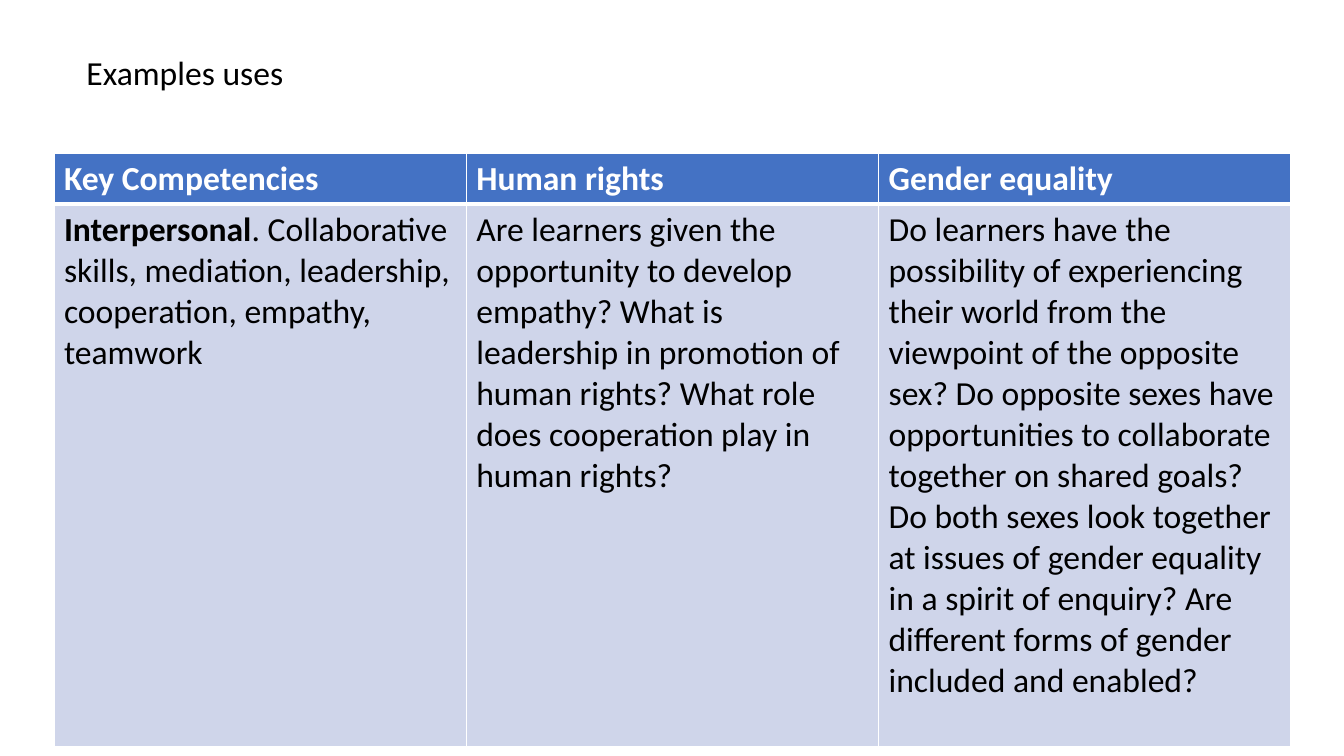
import dataclasses

import pptx
import pptx.dml.color
import pptx.enum.text
import pptx.oxml
import pptx.oxml.ns
import pptx.util

Cm = pptx.util.Cm
Pt = pptx.util.Pt


@dataclasses.dataclass(frozen=True)
class Theme:
    font: str = "Calibri"
    size: int = 24
    ink: str = "000000"
    paper: str = "FFFFFF"
    header: str = "4472C4"
    body: str = "CFD5EA"
    thin: int = 1
    thick: int = 3


@dataclasses.dataclass(frozen=True)
class Box:
    left: float
    top: float
    width: float
    height: float

    def lengths(self):
        return Cm(self.left), Cm(self.top), Cm(self.width), Cm(self.height)


THEME = Theme()
PAGE_WIDTH, PAGE_HEIGHT = 33.87, 19.05
HEADER_HEIGHT = 1.27

# Each column: heading, bold lead-in, body text
COLUMNS = [
    ("Key Competencies", "Interpersonal",
     ". Collaborative skills, mediation, leadership, cooperation, empathy, "
     "teamwork"),
    ("Human rights", "",
     "Are learners given the opportunity to develop empathy? What is "
     "leadership in promotion of human rights? What role does cooperation "
     "play in human rights?"),
    ("Gender equality", "",
     "Do learners have the possibility of experiencing their world from the "
     "viewpoint of the opposite sex? Do opposite sexes have opportunities to "
     "collaborate together on shared goals? Do both sexes look together at "
     "issues of gender equality in a spirit of enquiry? Are different forms "
     "of gender included and enabled?"),
]


def rgb(colour):
    return pptx.dml.color.RGBColor.from_string(colour)


def write(para, spans, colour):
    """Fill a paragraph with (text, bold) spans in the theme font."""
    para.font.name = THEME.font
    para.font.size = Pt(THEME.size)
    para.font.color.rgb = rgb(colour)
    for text, bold in spans:
        if text:
            span = para.add_run()
            span.text = text
            span.font.bold = bold


def set_borders(cell, top, bottom):
    properties = cell._tc.get_or_add_tcPr()
    widths = {"lnL": THEME.thin, "lnR": THEME.thin, "lnT": top, "lnB": bottom}
    for position, (tag, width) in enumerate(widths.items()):
        line = pptx.oxml.parse_xml(
            f'<a:{tag} {pptx.oxml.ns.nsdecls("a")} w="{Pt(width)}">'
            f'<a:solidFill><a:srgbClr val="{THEME.paper}"/></a:solidFill>'
            f'</a:{tag}>')
        properties.insert(position, line)


def style_cell(cell, spans, fill, colour, top, bottom):
    cell.fill.solid()
    cell.fill.fore_color.rgb = rgb(fill)
    set_borders(cell, top, bottom)
    write(cell.text_frame.paragraphs[0], spans, colour)


def add_title(page, box, text):
    frame = page.shapes.add_textbox(*box.lengths()).text_frame
    frame.word_wrap = True
    frame.auto_size = pptx.enum.text.MSO_AUTO_SIZE.SHAPE_TO_FIT_TEXT
    write(frame.paragraphs[0], [(text, False)], THEME.ink)


def add_competency_table(page, box):
    table = page.shapes.add_table(2, len(COLUMNS), *box.lengths()).table
    table.rows[0].height = Cm(HEADER_HEIGHT)
    table.rows[1].height = Cm(box.height - HEADER_HEIGHT)
    for index, (heading, lead, text) in enumerate(COLUMNS):
        table.columns[index].width = Cm(box.width / len(COLUMNS))
        style_cell(table.cell(0, index), [(heading, True)],
                   THEME.header, THEME.paper, THEME.thin, THEME.thick)
        style_cell(table.cell(1, index), [(lead, True), (text, False)],
                   THEME.body, THEME.ink, THEME.thick, THEME.thin)


def main():
    deck = pptx.Presentation()
    deck.slide_width, deck.slide_height = Cm(PAGE_WIDTH), Cm(PAGE_HEIGHT)
    page = deck.slides.add_slide(deck.slide_layouts[6])
    add_competency_table(page, Box(1.36, 3.86, 31.17, 14.94))
    add_title(page, Box(1.93, 1.18, 30.28, 1.28), "Examples uses")
    deck.save("out.pptx")


if __name__ == "__main__":
    main()
